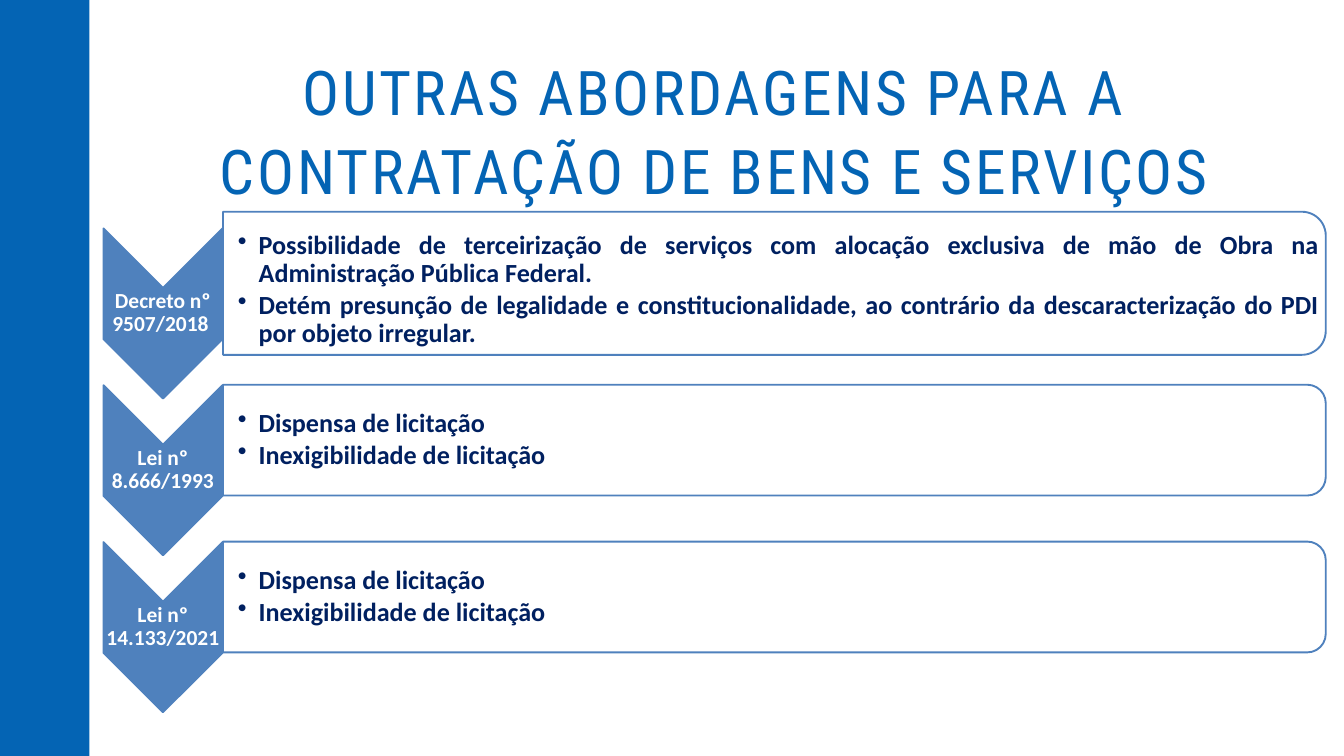
import pptx
import pptx.dml.color
import pptx.enum.shapes
import pptx.enum.text
import pptx.oxml.ns
import pptx.util
from lxml import etree

Cm = pptx.util.Cm
Pt = pptx.util.Pt
SHAPES = pptx.enum.shapes.MSO_SHAPE
ALIGN = pptx.enum.text.PP_ALIGN
ANCHOR = pptx.enum.text.MSO_ANCHOR

COLORS = {
    "brand": "0464B4",
    "accent": "4F81BD",
    "navy": "002060",
    "white": "FFFFFF",
}

TITLE_FONT = {"name": "Roboto Condensed", "size": Pt(66)}
LABEL_FONT = {"name": "Calibri", "size": Pt(23), "bold": True}
ITEM_FONT = {"name": "Calibri", "size": Pt(28), "bold": True}

BIDDING_ITEMS = ["Dispensa de licitação", "Inexigibilidade de licitação"]
LAWS = [
    {
        "label": "Decreto nº 9507/2018 ",
        "items": [
            "Possibilidade de terceirização de serviços com alocação exclusiva "
            "de mão de Obra na Administração Pública Federal.",
            "Detém presunção de legalidade e constitucionalidade, ao contrário "
            "da descaracterização do PDI por objeto irregular.",
        ],
        "height": 5.41,
        "align": ALIGN.JUSTIFY,
        "drop": 0.25,
    },
    {"label": "Lei nº 8.666/1993", "items": BIDDING_ITEMS,
     "height": 4.19, "align": ALIGN.LEFT, "drop": 0},
    {"label": "Lei nº 14.133/2021", "items": BIDDING_ITEMS,
     "height": 4.19, "align": ALIGN.LEFT, "drop": 0},
]

ROW_PITCH = 5.93
FIRST_PANEL_Y = 10.71
FIRST_CHEVRON_Y = 11.85
CHEVRON_X = 6.16
PANEL_X = 29.27


def apply_format(target, values):
    for name, value in values.items():
        setattr(target, name, value)


def rgb(color):
    return pptx.dml.color.RGBColor.from_string(COLORS[color])


def centered(x, y, width, height):
    return x - width / 2, y - height / 2, width, height


def add_block(page, kind, area, fill, line=None, rotation=0):
    block = page.shapes.add_shape(kind, *[Cm(length) for length in area])
    block.shadow.inherit = False
    block.rotation = rotation
    block.fill.solid()
    block.fill.fore_color.rgb = rgb(fill)
    if line:
        block.line.color.rgb = rgb(line)
        block.line.width = Pt(2)
    else:
        block.line.fill.background()
    return block


def set_opacity(block, percent):
    color = block.fill._xPr.find(".//" + pptx.oxml.ns.qn("a:srgbClr"))
    alpha = etree.SubElement(color, pptx.oxml.ns.qn("a:alpha"))
    alpha.set("val", str(percent * 1000))


def add_bullet(para):
    properties = para._p.get_or_add_pPr()
    properties.set("marL", str(Cm(0.79)))
    properties.set("indent", str(Cm(-0.79)))
    bullet = etree.SubElement(properties, pptx.oxml.ns.qn("a:buChar"))
    bullet.set("char", "•")


def add_text(page, area, texts, font, color, layout, margin=0, left=0, anchor=ANCHOR.MIDDLE):
    box = page.shapes.add_textbox(*[Cm(length) for length in area])
    frame = box.text_frame
    apply_format(frame, {
        "word_wrap": True,
        "vertical_anchor": anchor,
        "margin_left": Cm(left),
        "margin_right": Cm(margin),
        "margin_top": Cm(margin),
        "margin_bottom": Cm(margin),
    })
    for index, text in enumerate(texts):
        para = frame.add_paragraph() if index else frame.paragraphs[0]
        apply_format(para, layout)
        span = para.add_run()
        span.text = text
        apply_format(span.font, font)
        span.font.color.rgb = rgb(color)
    return box


def add_title(page):
    box = add_text(
        page, (4.47, 1.88, 45.09, 5.99),
        ["OUTRAS ABORDAGENS PARA A CONTRATAÇÃO DE BENS E SERVIÇOS"],
        TITLE_FONT, "brand", {"alignment": ALIGN.CENTER, "line_spacing": Pt(84)},
        anchor=ANCHOR.TOP)
    span = box.text_frame.paragraphs[0].runs[0]
    span.font._element.set("spc", "280")


def add_law(page, law, offset):
    chevron_y = FIRST_CHEVRON_Y + offset
    panel_y = FIRST_PANEL_Y + offset
    add_block(page, SHAPES.CHEVRON, centered(CHEVRON_X, chevron_y, 6.43, 4.5),
              "accent", "accent", 90)
    add_text(page, centered(CHEVRON_X, chevron_y, 4.5, 1.93), [law["label"]],
             LABEL_FONT, "white",
             {"alignment": ALIGN.CENTER, "line_spacing": 0.9}, 0.05, 0.05)
    panel = add_block(page, SHAPES.ROUND_2_SAME_RECTANGLE,
                      centered(PANEL_X, panel_y, law["height"], 41.68),
                      "white", "accent", 90)
    set_opacity(panel, 90)
    text_height = law["height"] - 0.45
    box = add_text(
        page, (8.43, panel_y - text_height / 2 + law["drop"], 41.45, text_height),
        law["items"], ITEM_FONT, "navy",
        {"alignment": law["align"], "line_spacing": 0.9, "space_after": Pt(4), "level": 1},
        0.05, 0.56)
    for para in box.text_frame.paragraphs:
        add_bullet(para)


def main():
    deck = pptx.Presentation()
    apply_format(deck, {"slide_width": Cm(50.8), "slide_height": Cm(28.58)})
    page = deck.slides.add_slide(deck.slide_layouts[6])
    add_block(page, SHAPES.RECTANGLE, (-0.51, -0.64, 3.89, 29.72), "brand")
    add_title(page)
    for index, law in enumerate(LAWS):
        add_law(page, law, index * ROW_PITCH)
    deck.save("out.pptx")


if __name__ == "__main__":
    main()
